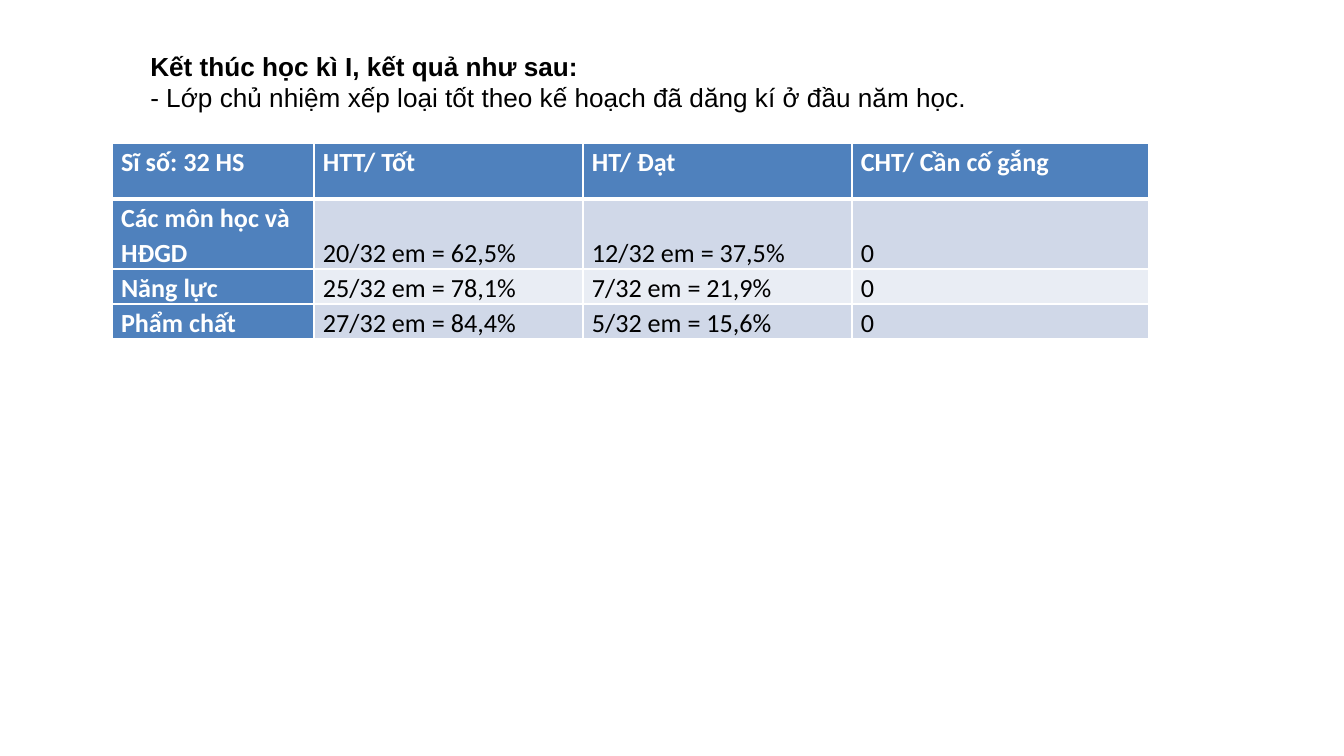
from lxml import etree
from pptx import Presentation
from pptx import util as u
from pptx.dml.color import RGBColor
from pptx.enum import text
from pptx.oxml.ns import qn

SCALE = 914400 / 134.4  # EMU per px
COLORS = {"header": "4F81BD", "band": "D0D8E8", "light": "E9EDF4",
          "white": "FFFFFF", "black": "000000"}


def px(length):
    return u.Emu(round(length * SCALE))


def format_font(run, color, **values):
    run.font.color.rgb = RGBColor.from_string(COLORS[color])
    for name, value in values.items():
        setattr(run.font, name, value)


presentation = Presentation()
presentation.slide_width, presentation.slide_height = px(1344), px(756)
slide = presentation.slides.add_slide(presentation.slide_layouts[6])

# Results table
rows = [
    ["Sĩ số: 32 HS", "HTT/ Tốt", "HT/ Đạt", "CHT/ Cần cố gắng"],
    ["Các môn học và HĐGD", "20/32 em = 62,5%", "12/32 em = 37,5%", "0"],
    ["Năng lực", "25/32 em = 78,1%", "7/32 em = 21,9%", "0"],
    ["Phẩm chất", "27/32 em = 84,4%", "5/32 em = 15,6%", "0"],
]
widths = [202, 269, 269, 297]
heights = [56, 70, 35, 35]
table = slide.shapes.add_table(len(rows), len(widths), px(112), px(143),
                               px(sum(widths)), px(sum(heights))).table
for column, width in zip(table.columns, widths):
    column.width = px(width)
for row, height in zip(table.rows, heights):
    row.height = px(height)

for r, labels in enumerate(rows):
    for c, label in enumerate(labels):
        cell = table.cell(r, c)
        is_header = r == 0 or c == 0
        wraps = (r, c) == (1, 0)
        cell_format = {
            "margin_left": px(9), "margin_right": px(9),
            "margin_top": 0, "margin_bottom": 0,
            "vertical_anchor": text.MSO_ANCHOR.BOTTOM if r == 1 and c else text.MSO_ANCHOR.TOP,
        }
        for name, value in cell_format.items():
            setattr(cell, name, value)

        # White borders, thicker under the header row
        properties = cell._tc.get_or_add_tcPr()
        for side in "LRTB":
            thick = (r, side) in [(0, "B"), (1, "T")]
            line = etree.SubElement(properties, qn(f"a:ln{side}"), w=str(u.Pt(3 if thick else 1)))
            fill = etree.SubElement(line, qn("a:solidFill"))
            etree.SubElement(fill, qn("a:srgbClr"), val=COLORS["white"])

        cell.fill.solid()
        shade = "header" if is_header else "band" if r % 2 else "light"
        cell.fill.fore_color.rgb = RGBColor.from_string(COLORS[shade])

        paragraph = cell.text_frame.paragraphs[0]
        paragraph.alignment = text.PP_ALIGN.LEFT if wraps else text.PP_ALIGN.JUSTIFY
        paragraph.line_spacing = 1.1
        run = paragraph.add_run()
        run.text = label
        format_font(run, "white" if is_header else "black",
                    name="Calibri", size=u.Pt(14), bold=is_header)

# Introduction
intro = slide.shapes.add_textbox(px(34), px(43), px(1310), px(77)).text_frame
intro.word_wrap = True
intro.vertical_anchor = text.MSO_ANCHOR.MIDDLE
lines = [
    ("Kết thúc học kì I, kết quả như sau:", True),
    ("- Lớp chủ nhiệm xếp loại tốt theo kế hoạch đã dăng kí ở đầu năm học.", False),
]
for i, (line, bold) in enumerate(lines):
    paragraph = intro.add_paragraph() if i else intro.paragraphs[0]
    paragraph.alignment = text.PP_ALIGN.JUSTIFY
    paragraph._p.get_or_add_pPr().set("indent", str(px(103)))
    run = paragraph.add_run()
    run.text = line
    format_font(run, "black", name="Arial", size=u.Pt(14), bold=bold)

presentation.save("out.pptx")
